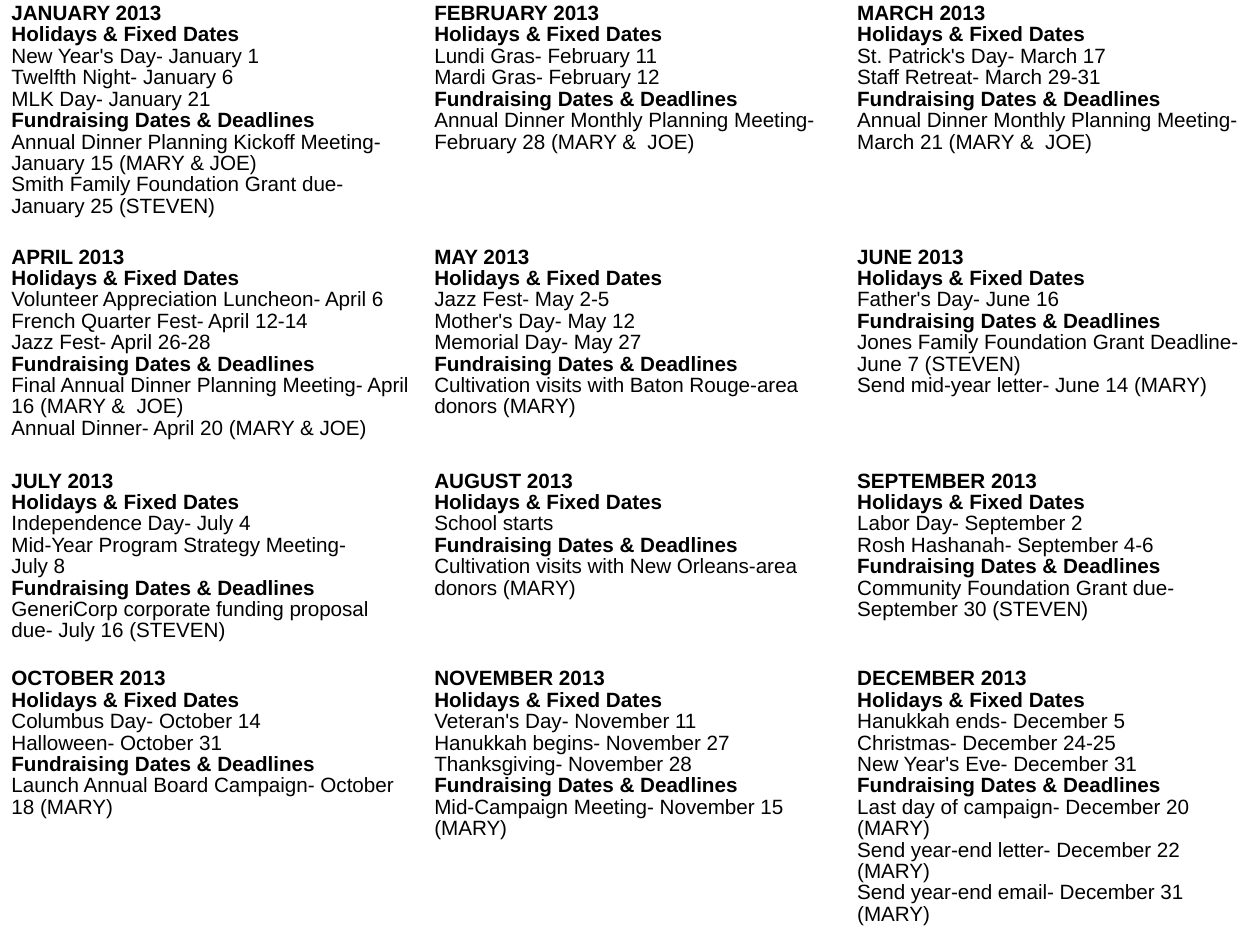
from lxml import etree
from pptx import Presentation
from pptx.dml.color import RGBColor
from pptx.oxml.ns import qn
from pptx.util import Inches, Pt

COLORS = {"text": "000000", "border": "000000", "cell": "FFFFFF"}
FONT = "Arial"
TEXT_SIZE = Pt(13)
LINE_SPACING = 0.93
BORDER_WIDTH = Pt(0.03)
COLUMN_COUNT = 3
ROW_WEIGHTS = [2.13, 1.96, 1.73, 2.53]
YEAR = 2013
HOLIDAYS = "Holidays & Fixed Dates"
FUNDRAISING = "Fundraising Dates & Deadlines"

MONTHS = [
    ("JANUARY",
     ["New Year's Day- January 1", "Twelfth Night- January 6", "MLK Day- January 21"],
     ["Annual Dinner Planning Kickoff Meeting- January 15 (MARY & JOE)",
      "Smith Family Foundation Grant due- January 25 (STEVEN)"]),
    ("FEBRUARY",
     ["Lundi Gras- February 11", "Mardi Gras- February 12"],
     ["Annual Dinner Monthly Planning Meeting- February 28 (MARY &  JOE)"]),
    ("MARCH",
     ["St. Patrick's Day- March 17", "Staff Retreat- March 29-31"],
     ["Annual Dinner Monthly Planning Meeting- March 21 (MARY &  JOE)"]),
    ("APRIL",
     ["Volunteer Appreciation Luncheon- April 6", "French Quarter Fest- April 12-14",
      "Jazz Fest- April 26-28"],
     ["Final Annual Dinner Planning Meeting- April 16 (MARY &  JOE)",
      "Annual Dinner- April 20 (MARY & JOE)"]),
    ("MAY",
     ["Jazz Fest- May 2-5", "Mother's Day- May 12", "Memorial Day- May 27"],
     ["Cultivation visits with Baton Rouge-area donors (MARY)"]),
    ("JUNE",
     ["Father's Day- June 16"],
     ["Jones Family Foundation Grant Deadline- June 7 (STEVEN)",
      "Send mid-year letter- June 14 (MARY)"]),
    ("JULY",
     ["Independence Day- July 4", "Mid-Year Program Strategy Meeting-", "July 8"],
     ["GeneriCorp corporate funding proposal due- July 16 (STEVEN)"]),
    ("AUGUST",
     ["School starts"],
     ["Cultivation visits with New Orleans-area donors (MARY)"]),
    ("SEPTEMBER",
     ["Labor Day- September 2", "Rosh Hashanah- September 4-6"],
     ["Community Foundation Grant due- September 30 (STEVEN)"]),
    ("OCTOBER",
     ["Columbus Day- October 14", "Halloween- October 31"],
     ["Launch Annual Board Campaign- October 18 (MARY)"]),
    ("NOVEMBER",
     ["Veteran's Day- November 11", "Hanukkah begins- November 27",
      "Thanksgiving- November 28"],
     ["Mid-Campaign Meeting- November 15 (MARY)"]),
    ("DECEMBER",
     ["Hanukkah ends- December 5", "Christmas- December 24-25",
      "New Year's Eve- December 31"],
     ["Last day of campaign- December 20 (MARY)",
      "Send year-end letter- December 22 (MARY)",
      "Send year-end email- December 31 (MARY)"]),
]


def style_cell(cell):
    cell.margin_left = cell.margin_right = Inches(0.1)
    cell.margin_top = Inches(0.06)
    cell.margin_bottom = Inches(0.05)
    cell.fill.solid()
    cell.fill.fore_color.rgb = RGBColor.from_string(COLORS["cell"])
    properties = cell._tc.get_or_add_tcPr()
    for index, side in enumerate(["a:lnL", "a:lnR", "a:lnT", "a:lnB"]):
        line = etree.Element(qn(side), w=str(int(BORDER_WIDTH)))
        fill = etree.SubElement(line, qn("a:solidFill"))
        etree.SubElement(fill, qn("a:srgbClr"), val=COLORS["border"])
        properties.insert(index, line)


def write_month(cell, name, holidays, deadlines):
    lines = [(f"{name} {YEAR}", True), (HOLIDAYS, True)]
    lines += [(entry, False) for entry in holidays]
    lines.append((FUNDRAISING, True))
    lines += [(entry, False) for entry in deadlines]
    frame = cell.text_frame
    for index, (text, bold) in enumerate(lines):
        para = frame.add_paragraph() if index else frame.paragraphs[0]
        para.line_spacing = LINE_SPACING
        span = para.add_run()
        span.text = text
        span.font.name = FONT
        span.font.size = TEXT_SIZE
        span.font.bold = bold
        span.font.color.rgb = RGBColor.from_string(COLORS["text"])


def add_calendar(page, left, top, width, height):
    box = page.shapes.add_table(len(ROW_WEIGHTS), COLUMN_COUNT, left, top, width, height)
    table = box.table
    table.first_row = False
    table.horz_banding = False
    for column in table.columns:
        column.width = width // COLUMN_COUNT
    for row, weight in zip(table.rows, ROW_WEIGHTS):
        row.height = int(height * weight / sum(ROW_WEIGHTS))
    for cell, month in zip(table.iter_cells(), MONTHS):
        style_cell(cell)
        write_month(cell, *month)


def main():
    deck = Presentation()
    deck.slide_width = Pt(793.75)
    deck.slide_height = Pt(595.25)
    page = deck.slides.add_slide(deck.slide_layouts[6])
    add_calendar(page, 0, Inches(-0.03), Inches(11.1), Inches(8.35))
    deck.save("out.pptx")


if __name__ == "__main__":
    main()
